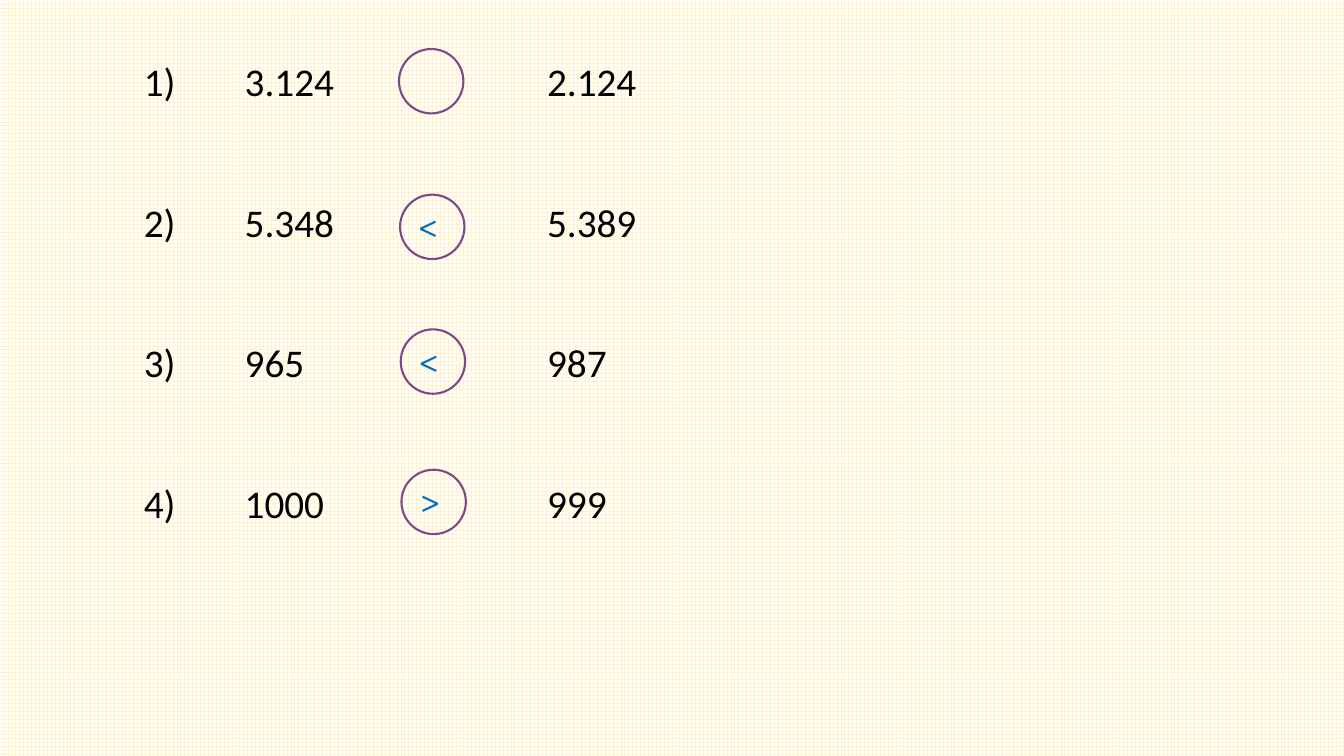
from lxml.etree import SubElement as Sub
from pptx import Presentation
from pptx.dml.color import RGBColor as RGB
from pptx.enum.dml import MSO_PATTERN as Pat
from pptx.enum.shapes import MSO_SHAPE as Kind
from pptx.oxml.ns import qn
from pptx.util import Pt

ROWS = [
    ("1)", "3.124", "", "2.124"),
    ("2)", "5.348", "<", "5.389"),
    ("3)", "965", "<", "987"),
    ("4)", "1000", ">", "999"),
]
RINGS = [(285, 35), (285.75, 139), (286.25, 235.25), (286.75, 335.5)]
STOPS = (72, 288)
SIZE = 28
COL = {"grid": "FFF2CC", "back": "FFFFFF", "text": "000000",
       "ring": "7D4989", "sign": "0070C0"}


def color(key):
    return RGB.from_string(COL[key])


def style(para, face, key):
    para.font.name = face
    para.font.size = Pt(SIZE)
    para.font.color.rgb = color(key)


def add_box(slide, left, top, width, height):
    box = slide.shapes.add_textbox(Pt(left), Pt(top), Pt(width), Pt(height))
    box.text_frame.word_wrap = True
    return box.text_frame


def add_list(slide):
    frame = add_box(slide, 95.75, 37.5, 698.5, 346.5)
    frame.text = "\n".join(f"{num}\t{left}\t{right}" for num, left, _, right in ROWS)
    for para in frame.paragraphs:
        style(para, "Calibri", "text")
        para.space_after = Pt(66.8)
        tabs = Sub(para._p.get_or_add_pPr(), qn("a:tabLst"))
        for stop in STOPS:
            Sub(tabs, qn("a:tab"), pos=str(Pt(stop)), algn="l")


def add_ring(slide, left, top, sign):
    ring = slide.shapes.add_shape(Kind.OVAL, Pt(left), Pt(top), Pt(46), Pt(46))
    ring.shadow.inherit = False
    ring.fill.background()
    ring.line.color.rgb = color("ring")
    ring.line.width = Pt(1.5)
    if sign:
        frame = add_box(slide, left + 5.5, top + 1.5, 55.5, 41)
        frame.text = sign
        style(frame.paragraphs[0], "Cambria", "sign")


def main():
    deck = Presentation()
    deck.slide_width, deck.slide_height = Pt(960), Pt(540)
    slide = deck.slides.add_slide(deck.slide_layouts[6])
    fill = slide.background.fill
    fill.patterned()
    fill.pattern = Pat.LARGE_GRID
    fill.fore_color.rgb = color("grid")
    fill.back_color.rgb = color("back")
    add_list(slide)
    for (left, top), row in zip(RINGS, ROWS):
        add_ring(slide, left, top, row[2])
    deck.save("out.pptx")


if __name__ == "__main__":
    main()
